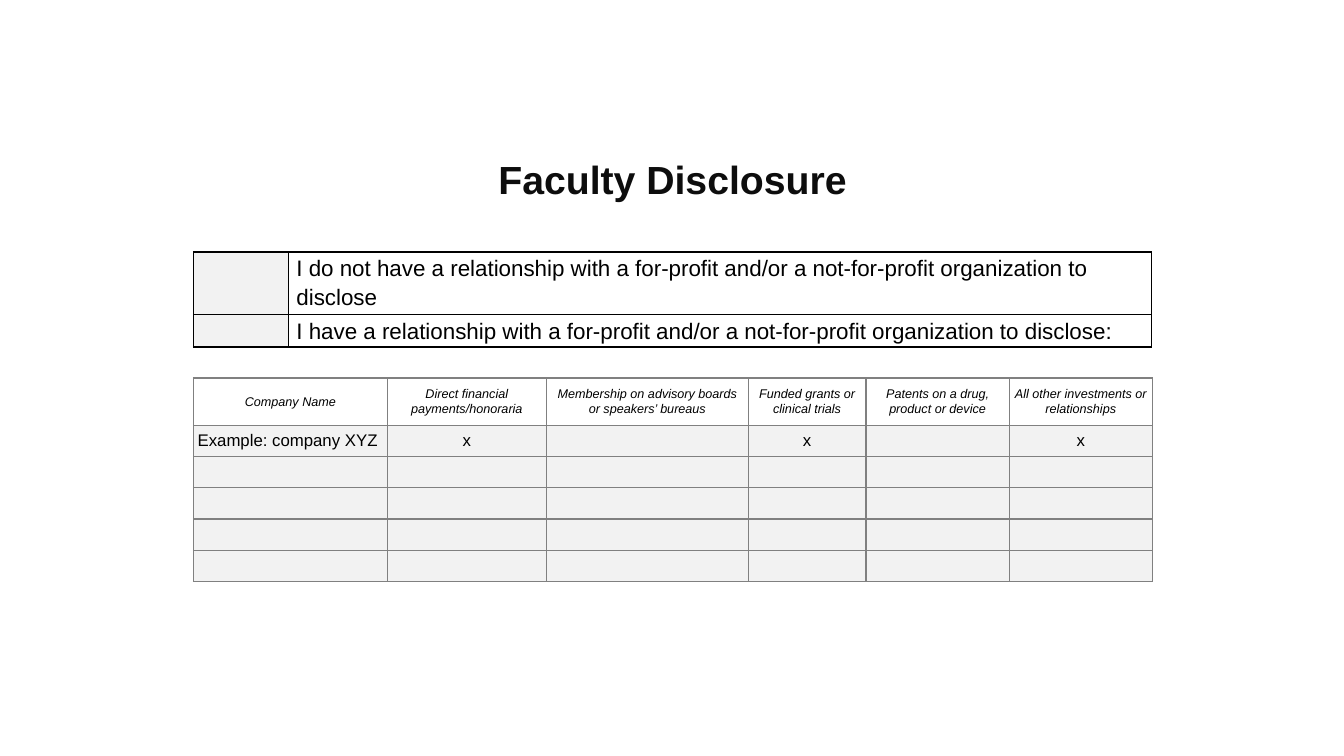
from lxml import etree
from pptx import Presentation
from pptx.dml.color import RGBColor
from pptx.enum.text import MSO_ANCHOR, PP_ALIGN
from pptx.oxml.ns import qn
from pptx.util import Inches, Pt

LEFT, CENTER = PP_ALIGN.LEFT, PP_ALIGN.CENTER
TOP, MIDDLE = MSO_ANCHOR.TOP, MSO_ANCHOR.MIDDLE

BLACK, TITLE_INK, GREY, SHADE, WHITE = "000000", "0D0D0D", "808080", "F2F2F2", "FFFFFF"
TABLE_LEFT = 1.92

STATEMENTS = [
    "I do not have a relationship with a for-profit and/or a not-for-profit organization to disclose",
    "I have a relationship with a for-profit and/or a not-for-profit organization to disclose:",
]
HEADINGS = [
    "Company Name",
    "Direct financial payments/honoraria",
    "Membership on advisory boards or speakers’ bureaus",
    "Funded grants or clinical trials",
    "Patents on a drug, product or device",
    "All other investments or relationships",
]
EXAMPLE = ["Example: company XYZ", "x", "", "x", "", "x"]
BLANK_ROWS = 4


def rgb(value):
    return RGBColor.from_string(value)


def set_attributes(target, values):
    for name, value in values.items():
        setattr(target, name, value)


class DisclosureSlide:
    def __init__(self, slide, font_name):
        self.slide = slide
        self.font_name = font_name

    def add_text(self, frame, text, size, color=BLACK, align=LEFT, spacing=1.0, **font_format):
        paragraph = frame.paragraphs[0]
        set_attributes(paragraph, {"alignment": align, "line_spacing": spacing})
        run = paragraph.add_run()
        run.text = text
        set_attributes(run.font, {"name": self.font_name, "size": Pt(size), **font_format})
        run.font.color.rgb = rgb(color)

    def title(self, text, left, top, width, height):
        box = self.slide.shapes.add_textbox(*map(Inches, (left, top, width, height)))
        set_attributes(box.text_frame, {"word_wrap": True, "vertical_anchor": MIDDLE})
        self.add_text(box.text_frame, text, 28, TITLE_INK, CENTER, 0.9, bold=True)

    def table(self, top, widths, heights):
        frame = self.slide.shapes.add_table(
            len(heights), len(widths), Inches(TABLE_LEFT), Inches(top),
            Inches(sum(widths)), Inches(sum(heights)))
        grid = frame.table
        set_attributes(grid, {"first_row": False, "horz_banding": False})
        for column, width in zip(grid.columns, widths):
            column.width = Inches(width)
        for row, height in zip(grid.rows, heights):
            row.height = Inches(height)
        return grid

    def cell(self, cell, text, fill, border, margins, anchor, **text_format):
        left, top, right, bottom = map(Inches, margins)
        set_attributes(cell, {
            "margin_left": left, "margin_top": top, "margin_right": right,
            "margin_bottom": bottom, "vertical_anchor": anchor})
        cell.fill.solid()
        cell.fill.fore_color.rgb = rgb(fill)
        self.borders(cell, border)
        if text:
            self.add_text(cell.text_frame, text, **text_format)

    def borders(self, cell, color):
        """Draw a one-point line on all four sides of the cell."""
        properties = cell._tc.get_or_add_tcPr()
        for index, side in enumerate(("lnL", "lnR", "lnT", "lnB")):
            line = etree.Element(qn(f"a:{side}"), w=str(Pt(1)))
            solid = etree.SubElement(line, qn("a:solidFill"))
            etree.SubElement(solid, qn("a:srgbClr"), val=color)
            properties.insert(index, line)

    def statements(self):
        grid = self.table(2.5, [0.94, 8.56], [0.6, 0.32])
        style = {"border": BLACK, "margins": (0.08, 0.01, 0.08, 0), "anchor": TOP,
                 "size": 16, "spacing": 1.15}
        for row, statement in enumerate(STATEMENTS):
            self.cell(grid.cell(row, 0), "", SHADE, **style)
            self.cell(grid.cell(row, 1), statement, WHITE, **style)

    def relationships(self):
        rows = [HEADINGS, EXAMPLE] + [[""] * len(HEADINGS)] * BLANK_ROWS
        heights = [0.47] + [0.31] * (len(rows) - 1)
        grid = self.table(3.75, [1.92, 1.58, 2, 1.17, 1.42, 1.42], heights)
        for row, entries in enumerate(rows):
            heading = row == 0
            for column, entry in enumerate(entries):
                self.cell(
                    grid.cell(row, column), entry, WHITE if heading else SHADE, GREY,
                    (0.04, 0, 0.04, 0), MIDDLE, size=9 if heading else 12, italic=heading,
                    align=CENTER if heading or column else LEFT)


def main():
    deck = Presentation()
    set_attributes(deck, {"slide_width": Inches(13.33), "slide_height": Inches(7.5)})
    disclosure = DisclosureSlide(deck.slides.add_slide(deck.slide_layouts[6]), "Arial")
    disclosure.title("Faculty Disclosure", 1.67, 1.39, 10, 0.83)
    disclosure.relationships()
    disclosure.statements()
    deck.save("out.pptx")


if __name__ == "__main__":
    main()
